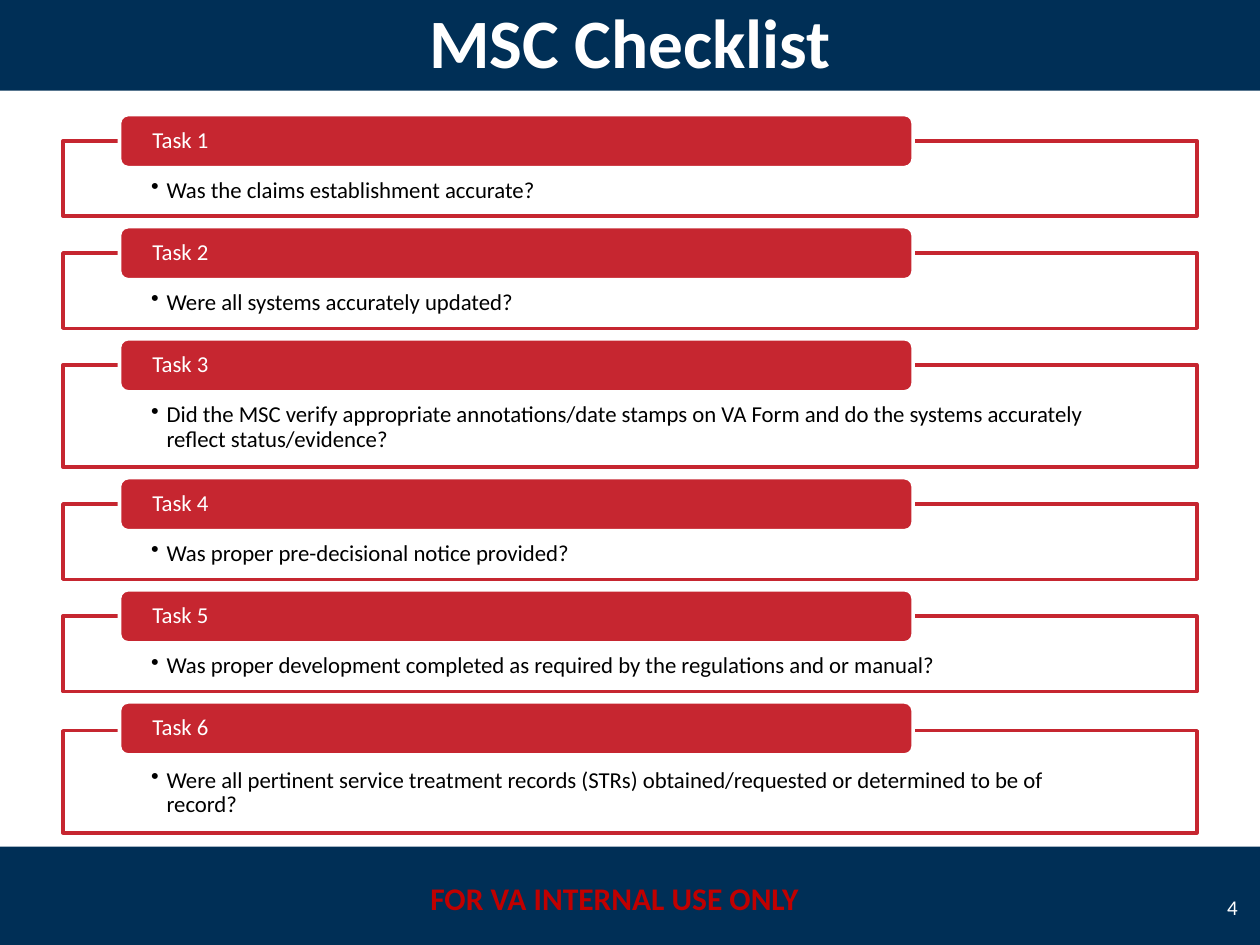
from lxml.etree import SubElement
from pptx import Presentation
from pptx.dml.color import RGBColor
from pptx.enum.shapes import MSO_SHAPE
from pptx.enum.text import MSO_ANCHOR, PP_ALIGN
from pptx.oxml.ns import qn
from pptx.util import Cm, Pt

TITLE = "MSC Checklist"
FOOTER = "FOR VA INTERNAL USE ONLY"
PAGE = "4"
SHORT, TALL = 1.52, 2.06  # box heights for one and two lines of text
# question, box height, drop from the top of the tab to the top of the box
TASKS = [
    ("Was the claims establishment accurate?", SHORT, 0.53),
    ("Were all systems accurately updated?", SHORT, 0.53),
    ("Did the MSC verify appropriate annotations/date stamps on VA Form and do "
     "the systems accurately reflect status/evidence?", TALL, 0.53),
    ("Was proper pre-decisional notice provided?", SHORT, 0.53),
    ("Was proper development completed as required by the regulations and or manual?",
     SHORT, 0.53),
    ("Were all pertinent service treatment records (STRs) obtained/requested or "
     "determined to be of record?", TALL, 0.58),
]
COLORS = {"navy": "002F56", "red": "C62630", "footer": "C00000",
          "white": "FFFFFF", "black": "000000"}
FONT = "Calibri"
WIDTH, HEIGHT = 25.4, 19.05
BAND_H = 2.03
FIRST_TOP, GAP = 2.31, 0.21
BOX_X, BOX_W = 1.27, 22.86
TAB_X, TAB_W, TAB_H = 2.41, 16, 1.07


def color(name):
    return RGBColor.from_string(COLORS[name])


def add_block(s, kind, x, y, w, h, fill, line=None):
    sp = s.shapes.add_shape(kind, Cm(x), Cm(y), Cm(w), Cm(h))
    sp.shadow.inherit = False
    sp.fill.solid()
    sp.fill.fore_color.rgb = color(fill)
    if line:
        sp.line.color.rgb = color(line)
        sp.line.width = Pt(2)
    else:
        sp.line.fill.background()
    return sp


def write(sp, text, size, ink, align, anchor=MSO_ANCHOR.MIDDLE, bold=False,
          insets=(0.25, 0.13, 0.25, 0.13), bullet=False, spacing=None):
    tf = sp.text_frame
    tf.word_wrap = True
    tf.vertical_anchor = anchor
    tf.margin_left, tf.margin_top, tf.margin_right, tf.margin_bottom = map(Cm, insets)
    tf.text = text
    p = tf.paragraphs[0]
    p.alignment = align
    if spacing:
        p.line_spacing = spacing
    if bullet:
        pPr = p._p.get_or_add_pPr()
        pPr.set("marL", str(Cm(0.31)))
        pPr.set("indent", str(-Cm(0.31)))
        SubElement(pPr, qn("a:buChar")).set("char", "•")
    font = p.runs[0].font
    font.name, font.size, font.bold = FONT, Pt(size), bold
    font.color.rgb = color(ink)


def add_task(s, number, question, top, box_h, drop):
    box = add_block(s, MSO_SHAPE.RECTANGLE, BOX_X, top + drop, BOX_W, box_h,
                    "white", "red")
    write(box, question, 13, "black", PP_ALIGN.LEFT, MSO_ANCHOR.TOP,
          insets=(1.78, 0.76, 1.78, 0.25), bullet=True, spacing=0.9)
    tab = add_block(s, MSO_SHAPE.ROUNDED_RECTANGLE, TAB_X, top, TAB_W, TAB_H,
                    "red", "white")
    write(tab, f"Task {number}", 13, "white", PP_ALIGN.LEFT,
          insets=(0.61, 0, 0.61, 0), spacing=0.9)


def main():
    prs = Presentation()
    prs.slide_width, prs.slide_height = Cm(WIDTH), Cm(HEIGHT)
    s = prs.slides.add_slide(prs.slide_layouts[6])

    add_block(s, MSO_SHAPE.RECTANGLE, 0, 17.07, WIDTH, BAND_H, "navy")
    header = add_block(s, MSO_SHAPE.RECTANGLE, 0, -0.2, WIDTH, BAND_H, "navy")
    write(header, TITLE, 39.6, "white", PP_ALIGN.CENTER, bold=True)
    footer = s.shapes.add_textbox(Cm(8.26), Cm(17.6), Cm(8.26), Cm(1.02))
    write(footer, FOOTER, 18, "footer", PP_ALIGN.CENTER, MSO_ANCHOR.TOP, bold=True)
    page = s.shapes.add_textbox(Cm(24.13), Cm(17.78), Cm(1.07), Cm(1.02))
    write(page, PAGE, 12, "white", PP_ALIGN.RIGHT)

    top = FIRST_TOP
    for number, (question, box_h, drop) in enumerate(TASKS, 1):
        add_task(s, number, question, top, box_h, drop)
        top += drop + box_h + GAP

    prs.save("out.pptx")


if __name__ == "__main__":
    main()
